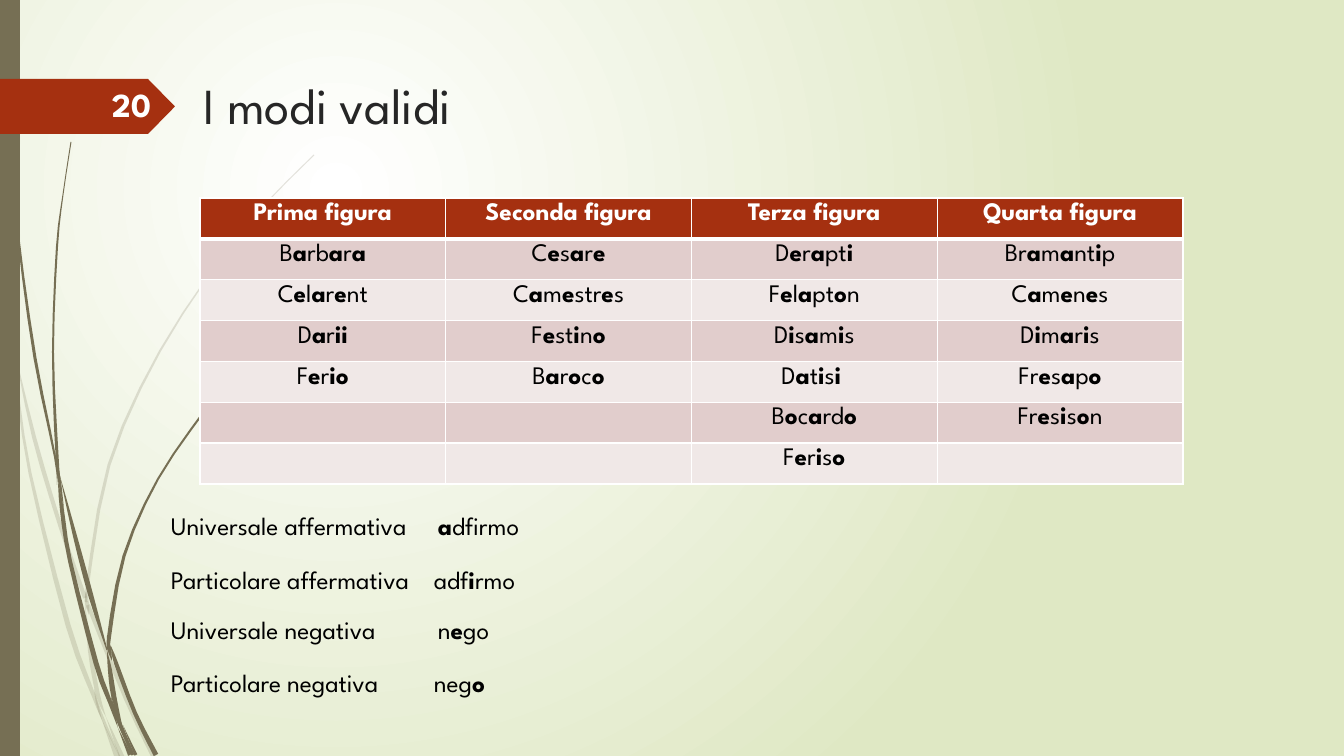
from dataclasses import dataclass
from itertools import groupby
from math import hypot

from lxml import etree
from pptx import Presentation
from pptx.dml.color import RGBColor
from pptx.enum.shapes import MSO_SHAPE
from pptx.enum.text import MSO_ANCHOR, MSO_AUTO_SIZE, PP_ALIGN
from pptx.oxml import parse_xml
from pptx.oxml.ns import nsdecls, qn
from pptx.util import Emu, Pt

WIDTH, HEIGHT = 1344, 756
SCALE = 12192000 / WIDTH


@dataclass(frozen=True)
class Theme:
    font: str = "League Spartan"
    glow: str = "FFFFFF"
    meadow: str = "DFE8C4"
    stem: str = "766F54"
    accent: str = "A53010"
    white: str = "FFFFFF"
    ink: str = "000000"
    heading: str = "262626"
    bands: tuple = ("E1CDCC", "F0E8E7")
    title_size: int = 36
    number_size: int = 24
    text_size: int = 18


# Centre line of each blade of grass: x, y and thickness in px
PALE_BLADES = [
    [(0, 293, 4), (6, 320, 3), (11, 353, 0)],
    [(14, 348, 0), (34, 437, 4), (60, 525, 4), (85, 598, 4)],
    [(88, 605, 4), (126, 699, 4), (154, 757, 5)],
    [(11, 353, 0), (16, 380, 2), (30, 473, 3), (68, 625, 5), (93, 694, 4), (102, 720, 0)],
    [(102, 720, 0), (117, 757, 5)],
    [(314, 155, 1), (270, 199, 1), (230, 246, 1), (160, 351, 2), (109, 465, 3), (87, 589, 3), (88, 601, 0)],
    [(86, 591, 0), (87, 603, 4), (89, 615, 0)],
    [(85, 604, 0), (90, 651, 4), (98, 695, 4), (106, 717, 0)],
    [(94, 688, 0), (100, 712, 3), (120, 757, 1)],
    [(106, 717, 0), (122, 757, 5)],
]
DARK_BLADES = [
    [(4, 0, 1), (8, 110, 1), (18, 234, 2), (35, 358, 3), (55, 457, 2), (57, 485, 0)],
    [(58, 481, 0), (62, 510, 4), (70, 561, 4), (96, 663, 5), (110, 702, 4), (118, 728, 0)],
    [(118, 728, 0), (130, 755, 4)],
    [(71, 142, 1), (63, 195, 1), (57, 247, 2), (53, 352, 2), (57, 454, 3), (60, 476, 0)],
    [(55, 453, 0), (59, 478, 3), (64, 509, 0)],
    [(60, 476, 0), (75, 536, 4), (91, 596, 5), (107, 650, 1)],
    [(111, 646, 0), (116, 663, 4), (135, 713, 4), (156, 755, 5)],
    [(263, 347, 1), (233, 376, 1), (206, 409, 2), (158, 479, 2), (124, 556, 3), (109, 637, 4), (111, 646, 0)],
    [(107, 636, 0), (109, 648, 4), (112, 661, 0)],
    [(107, 650, 0), (110, 670, 4), (114, 697, 5), (122, 725, 0)],
    [(111, 697, 0), (117, 717, 4), (133, 755, 3)],
    [(123, 725, 0), (136, 755, 3)],
]

FIGURES = {
    "Prima figura": ["Barbara", "Celarent", "Darii", "Ferio"],
    "Seconda figura": ["Cesare", "Camestres", "Festino", "Baroco"],
    "Terza figura": ["Derapti", "Felapton", "Disamis", "Datisi ", "Bocardo", "Feriso"],
    "Quarta figura": ["Bramantip", "Camenes", "Dimaris", "Fresapo", "Fresison"],
}
# Text with asterisks around the bold letter, top of its box, tab stop
PROPOSITIONS = [
    ("Universale affermativa\t*a*dfirmo", 505, 267),
    ("Particolare affermativa\tadf*i*rmo", 559, 263),
    ("Universale negativa\tn*e*go", 609, 267),
    ("Particolare negativa\tneg*o*", 662, 263),
]


def px(length):
    return Emu(round(length * SCALE))


def smooth(points, steps=3):
    """Pass a Catmull-Rom curve through the points."""
    padded = [points[0], *points, points[-1]]
    curve = []
    for a, b, c, d in zip(padded, padded[1:], padded[2:], padded[3:]):
        for step in range(steps):
            t = step / steps
            curve.append(tuple(
                q + t / 2 * (r - p + t * (2 * p - 5 * q + 4 * r - s + t * (3 * (q - r) + s - p)))
                for p, q, r, s in zip(a, b, c, d)))
    return curve + [points[-1]]


def bold_vowels(word):
    return [("".join(letters), bold) for bold, letters in groupby(word, lambda letter: letter in "aeiou")]


def bold_marked(text):
    return [(piece, index % 2 == 1) for index, piece in enumerate(text.split("*")) if piece]


class SlideBuilder:
    def __init__(self, presentation, theme):
        self.theme = theme
        self.slide = presentation.slides.add_slide(presentation.slide_layouts[5])
        self.shapes = self.slide.shapes

    def background(self):
        fill = self.slide.background.fill
        fill.gradient()
        fill.gradient_stops[0].color.rgb = RGBColor.from_string(self.theme.glow)
        fill.gradient_stops[1].color.rgb = RGBColor.from_string(self.theme.meadow)
        fill.gradient_stops[0].position, fill.gradient_stops[1].position = 0, 1
        gradient = self.slide.background._cSld.find(".//" + qn("a:gradFill"))
        gradient.replace(gradient.find(qn("a:lin")), parse_xml(
            f'<a:path {nsdecls("a")} path="circle">'
            '<a:fillToRect l="50000" t="50000" r="100000" b="100000"/></a:path>'))

    def paint(self, shape, color, opacity=100):
        shape.shadow.inherit = False
        shape.fill.solid()
        shape.fill.fore_color.rgb = RGBColor.from_string(color)
        shape.line.fill.background()
        if opacity < 100:
            solid_color = shape._element.spPr.find(".//" + qn("a:srgbClr"))
            etree.SubElement(solid_color, qn("a:alpha"), val=str(opacity * 1000))

    def blade(self, points, opacity):
        curve = smooth(points)
        left, right = [], []
        for before, (x, y, thickness), after in zip(curve[:1] + curve, curve, curve[1:] + curve[-1:]):
            dx, dy = after[0] - before[0], after[1] - before[1]
            half = max(thickness, 0) / 2 / hypot(dx, dy)
            left.append((px(x - dy * half), px(y + dx * half)))
            right.append((px(x + dy * half), px(y - dx * half)))
        outline = left + right[::-1]
        builder = self.shapes.build_freeform(*outline[0])
        builder.add_line_segments(outline[1:], close=True)
        self.paint(builder.convert_to_shape(), self.theme.stem, opacity)

    def block(self, preset, left, top, width, height, color):
        shape = self.shapes.add_shape(preset, px(left), px(top), px(width), px(height))
        self.paint(shape, color)
        return shape

    def place(self, shape, left, top, width, height):
        shape.left, shape.top, shape.width, shape.height = map(px, (left, top, width, height))
        frame = shape.text_frame
        frame.word_wrap = True
        frame.auto_size = MSO_AUTO_SIZE.NONE
        frame.vertical_anchor = MSO_ANCHOR.TOP
        return frame

    def style(self, paragraph, size, color, bold=False, align=PP_ALIGN.LEFT):
        paragraph.alignment = align
        for run in paragraph.runs:
            run.font.name = self.theme.font
            run.font.size = Pt(size)
            run.font.bold = bold
            run.font.color.rgb = RGBColor.from_string(color)

    def write_pieces(self, paragraph, pieces, align=PP_ALIGN.LEFT):
        for text, _ in pieces:
            paragraph.add_run().text = text
        self.style(paragraph, self.theme.text_size, self.theme.ink, align=align)
        for run, (_, bold) in zip(paragraph.runs, pieces):
            run.font.bold = bold

    def title(self, text, *box):
        frame = self.place(self.shapes.title, *box)
        frame.text = text
        self.style(frame.paragraphs[0], self.theme.title_size, self.theme.heading)

    def slide_number(self, text, *box):
        frame = self.place(self.shapes.add_textbox(0, 0, 0, 0), *box)
        frame.text = text
        self.style(frame.paragraphs[0], self.theme.number_size, self.theme.white, bold=True)

    def proposition(self, text, tab, *box):
        paragraph = self.place(self.shapes.add_textbox(0, 0, 0, 0), *box).paragraphs[0]
        self.write_pieces(paragraph, bold_marked(text))
        tabs = etree.SubElement(paragraph._p.get_or_add_pPr(), qn("a:tabLst"))
        etree.SubElement(tabs, qn("a:tab"), pos=str(px(tab)), algn="l")

    def cell_borders(self, cell, bottom):
        properties = cell._tc.get_or_add_tcPr()
        for index, (side, points) in enumerate(zip("LRTB", (1, 1, 1, bottom))):
            properties.insert(index, parse_xml(
                f'<a:ln{side} {nsdecls("a")} w="{Pt(points)}"><a:solidFill>'
                f'<a:srgbClr val="{self.theme.white}"/></a:solidFill></a:ln{side}>'))

    def figure_table(self, figures, *box):
        row_count = 1 + max(map(len, figures.values()))
        table = self.shapes.add_table(row_count, len(figures), *map(px, box)).table
        for column, (heading, moods) in enumerate(figures.items()):
            for row in range(row_count):
                cell = table.cell(row, column)
                paragraph = cell.text_frame.paragraphs[0]
                cell.fill.solid()
                color = self.theme.bands[(row - 1) % 2] if row else self.theme.accent
                cell.fill.fore_color.rgb = RGBColor.from_string(color)
                self.cell_borders(cell, bottom=1 if row else 3)
                if row == 0:
                    paragraph.text = heading
                    self.style(paragraph, self.theme.text_size, self.theme.white, True, PP_ALIGN.CENTER)
                elif row <= len(moods):
                    self.write_pieces(paragraph, bold_vowels(moods[row - 1]), PP_ALIGN.CENTER)


def main():
    presentation = Presentation()
    presentation.slide_width, presentation.slide_height = px(WIDTH), px(HEIGHT)
    theme = Theme()
    builder = SlideBuilder(presentation, theme)
    builder.background()
    for blades, opacity in ((PALE_BLADES, 20), (DARK_BLADES, 100)):
        for points in blades:
            builder.blade(points, opacity)
    builder.block(MSO_SHAPE.RECTANGLE, 0, 0, 20, HEIGHT, theme.stem)
    marker = builder.block(MSO_SHAPE.PENTAGON, 0, 79, 175, 55, theme.accent)
    marker.adjustments[0] = 0.49
    builder.figure_table(FIGURES, 200, 198, 983, 286)
    builder.title("I modi validi", 193, 69, 983, 141)
    builder.slide_number("20", 102, 79, 69, 50)
    for text, top, tab in PROPOSITIONS:
        builder.proposition(text, tab, 161, top, 428, 72)
    presentation.save("out.pptx")


if __name__ == "__main__":
    main()
